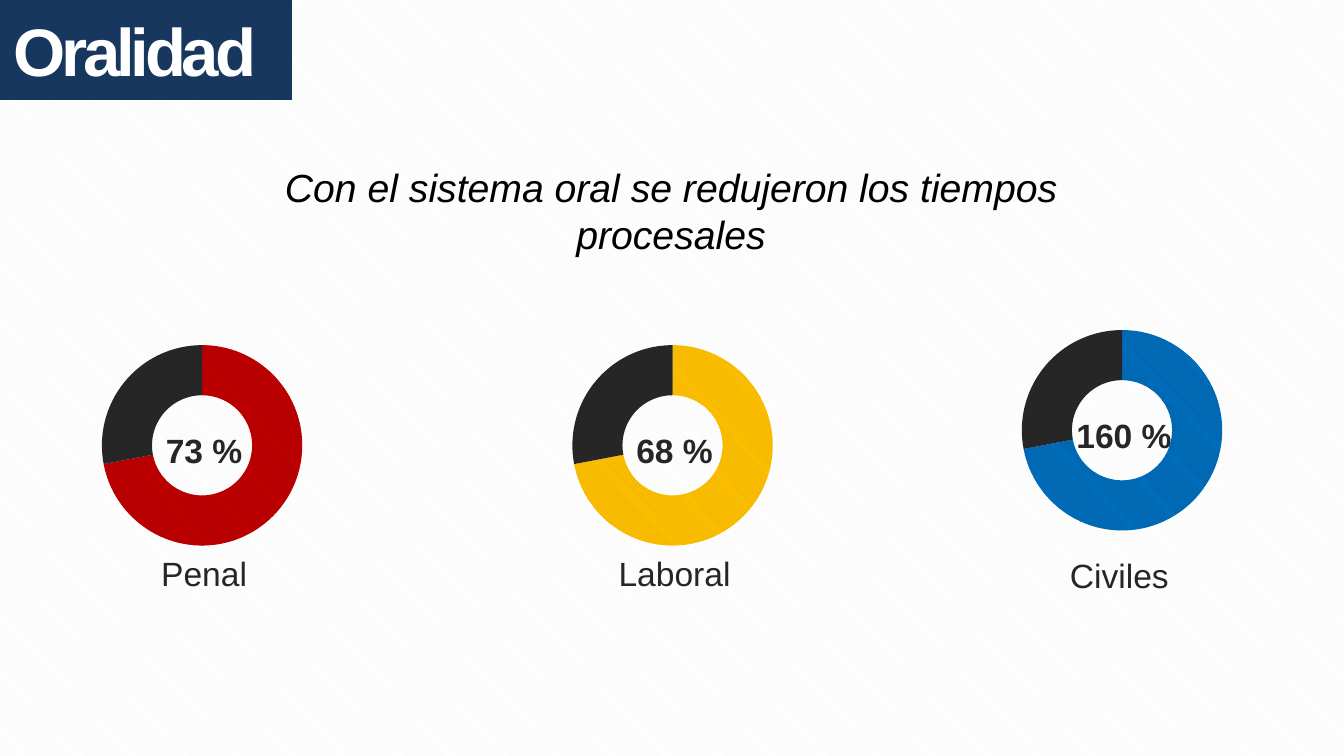
from dataclasses import dataclass

import pptx
import pptx.chart.data
import pptx.dml.color
import pptx.enum.chart
import pptx.enum.dml
import pptx.enum.shapes
import pptx.enum.text
import pptx.util
from lxml import etree
from pptx.util import Cm

PATTERN = pptx.enum.dml.MSO_PATTERN
CHART_NS = "http://schemas.openxmlformats.org/drawingml/2006/chart"
NAVY, DARK, WHITE, BLACK = "17375E", "262626", "FFFFFF", "000000"
CHART_WIDTH, CHART_HEIGHT = 8.71, 5.79
VALUE_DROP = 2.39  # from the top of a chart to its centre text
TEXT_SHIFT = 0.05


@dataclass
class Ring:
    label: str
    value: str
    left: float
    top: float
    label_top: float
    pattern: PATTERN
    stripe: str
    base: str


RINGS = [
    Ring("Penal", "73 %", 0.74, 8.33, 13.82,
         PATTERN.LIGHT_DOWNWARD_DIAGONAL, "960000", "C00000"),
    Ring("Laboral", "68 %", 12.6, 8.33, 13.82,
         PATTERN.DARK_DOWNWARD_DIAGONAL, "D6A300", "FFC000"),
    Ring("Civiles ", "160 %", 23.93, 7.95, 13.87,
         PATTERN.LIGHT_DOWNWARD_DIAGONAL, "00487E", "0070C0"),
]


def color(value: str) -> pptx.dml.color.RGBColor:
    return pptx.dml.color.RGBColor.from_string(value)


def fill_pattern(fill, pattern: PATTERN, stripe: str, base: str) -> None:
    fill.patterned()
    fill.pattern = pattern
    fill.fore_color.rgb = color(stripe)
    fill.back_color.rgb = color(base)


def write(shape, text: str, size: int, ink: str, bold: bool = False, italic: bool = False):
    """Put one Arial paragraph in the shape and return the paragraph."""
    shape.text_frame.word_wrap = True
    paragraph = shape.text_frame.paragraphs[0]
    paragraph.text = text
    paragraph.alignment = pptx.enum.text.PP_ALIGN.CENTER
    font = paragraph.font
    font.name, font.size = "Arial", pptx.util.Pt(size)
    font.bold, font.italic = bold, italic
    font.color.rgb = color(ink)
    return paragraph


def add_title(slide) -> None:
    banner = slide.shapes.add_shape(
        pptx.enum.shapes.MSO_SHAPE.RECTANGLE, 0, 0, Cm(7.34), Cm(2.51))
    banner.shadow.inherit = False
    banner.fill.solid()
    banner.fill.fore_color.rgb = color(NAVY)
    banner.line.color.rgb = color(NAVY)
    banner.line.width = pptx.util.Pt(0.75)
    frame = banner.text_frame
    frame.margin_left = frame.margin_right = Cm(0.33)
    frame.margin_top = frame.margin_bottom = Cm(0.18)
    frame.vertical_anchor = pptx.enum.text.MSO_ANCHOR.MIDDLE
    paragraph = write(banner, "Oralidad", 48, WHITE, bold=True)
    paragraph.alignment = pptx.enum.text.PP_ALIGN.LEFT
    paragraph.runs[0].font._element.set("spc", "-300")


def set_plot_area(chart) -> None:
    """Fix the ring's size within the chart and the size of its hole."""
    layout = chart._chartSpace.find(f".//{{{CHART_NS}}}plotArea/{{{CHART_NS}}}layout")
    if layout is None:
        layout = etree.Element(f"{{{CHART_NS}}}layout")
        chart._chartSpace.find(f".//{{{CHART_NS}}}plotArea").insert(0, layout)
    manual = etree.SubElement(layout, f"{{{CHART_NS}}}manualLayout")
    settings = {"layoutTarget": "inner", "xMode": "edge", "yMode": "edge",
                "x": "0.21", "y": "0.06", "w": "0.58", "h": "0.88"}
    for name, value in settings.items():
        etree.SubElement(manual, f"{{{CHART_NS}}}{name}").set("val", value)
    chart._chartSpace.find(f".//{{{CHART_NS}}}holeSize").set("val", "80")


def add_ring(slide, ring: Ring) -> None:
    data = pptx.chart.data.CategoryChartData()
    data.categories = ["1", "2"]
    data.add_series("Series 1", (72, 28))
    chart = slide.shapes.add_chart(
        pptx.enum.chart.XL_CHART_TYPE.DOUGHNUT, Cm(ring.left), Cm(ring.top),
        Cm(CHART_WIDTH), Cm(CHART_HEIGHT), data).chart
    chart.has_legend = False
    chart.has_title = False
    chart.font.name, chart.font.size = "Calibri", pptx.util.Pt(18)
    chart.font.color.rgb = color(BLACK)
    plot = chart.plots[0]
    plot.vary_by_categories = True
    plot.has_data_labels = False
    share, rest = (plot.series[0].points[index].format for index in range(2))
    fill_pattern(share.fill, ring.pattern, ring.stripe, ring.base)
    rest.fill.solid()
    rest.fill.fore_color.rgb = color(DARK)
    for part in (share, rest):
        part.line.fill.background()
    set_plot_area(chart)

    for text, top, bold in ((ring.value, ring.top + VALUE_DROP, True),
                            (ring.label, ring.label_top, False)):
        box = slide.shapes.add_textbox(
            Cm(ring.left + TEXT_SHIFT), Cm(top), Cm(CHART_WIDTH), Cm(1.27))
        write(box, text, 24, DARK, bold=bold)


def main() -> None:
    presentation = pptx.Presentation()
    presentation.slide_width, presentation.slide_height = Cm(33.88), Cm(19.05)
    slide = presentation.slides.add_slide(presentation.slide_layouts[6])
    fill_pattern(slide.background.fill, PATTERN.LIGHT_DOWNWARD_DIAGONAL, "F2F2F2", WHITE)
    add_title(slide)
    subtitle = slide.shapes.add_textbox(Cm(4.47), Cm(3.99), Cm(24.89), Cm(2.64))
    write(subtitle, "Con el sistema oral se redujeron los tiempos procesales",
          28, BLACK, italic=True)
    for ring in RINGS:
        add_ring(slide, ring)
    presentation.save("out.pptx")


if __name__ == "__main__":
    main()
